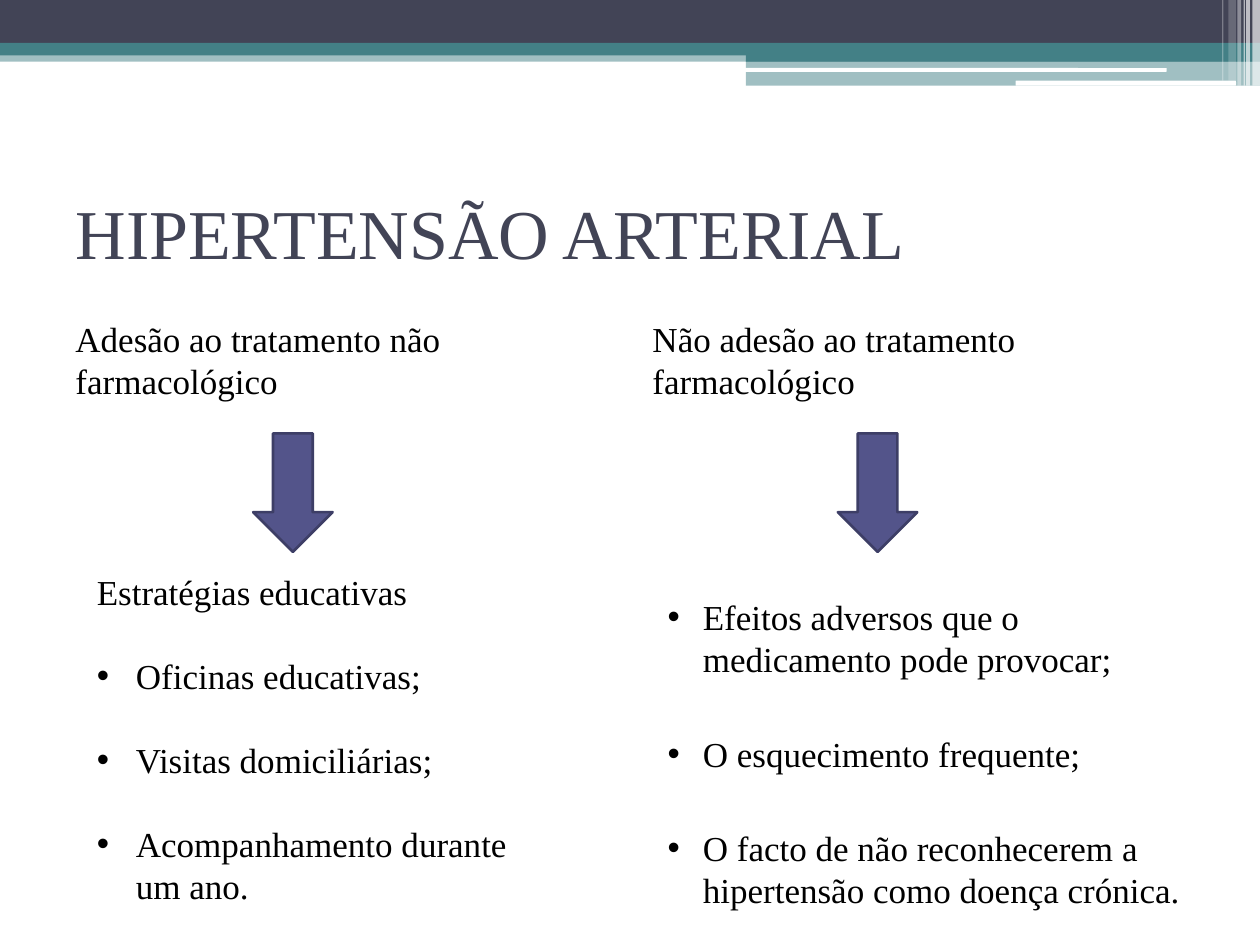
from dataclasses import dataclass

from lxml import etree
from pptx import Presentation
from pptx.dml.color import RGBColor
from pptx.enum.shapes import MSO_SHAPE
from pptx.enum.text import MSO_ANCHOR, PP_ALIGN
from pptx.oxml.ns import qn
from pptx.util import Inches, Pt

RECT = MSO_SHAPE.RECTANGLE
ROUNDED = MSO_SHAPE.ROUNDED_RECTANGLE
DOWN_ARROW = MSO_SHAPE.DOWN_ARROW
LEFT = PP_ALIGN.LEFT
MIDDLE = MSO_ANCHOR.MIDDLE
TOP = MSO_ANCHOR.TOP

WIDTH, HEIGHT = 10, 7.5
FONT = "Times New Roman"
NAVY, TEAL, WHITE, BLACK = "424456", "438086", "FFFFFF", "000000"
INDIGO, DARK_INDIGO = "53548A", "3D3E66"
LINE_HEIGHT = 24
HEADING_TOP, ARROW_TOP = 2.47, 3.44


@dataclass(frozen=True)
class Band:
    left: float
    top: float
    width: float
    height: float
    fill: str
    opacity: int = 100
    preset: int = RECT


@dataclass(frozen=True)
class Column:
    left: float
    heading: str
    arrow_left: float
    list_left: float
    list_top: float
    list_width: float
    hanging: float
    gap: int
    items: tuple[str, ...]
    intro: str = ""


BANDS = (
    Band(0, 0.4, WIDTH, 0.09, TEAL, 50),
    Band(0, 0, WIDTH, 0.34, NAVY),
    Band(0, 0.34, WIDTH, 0.1, TEAL),
    Band(5.92, 0.39, 4.08, 0.1, TEAL),
    Band(5.92, 0.48, 4.08, 0.2, TEAL, 50),
    Band(5.91, 0.54, 3.35, 0.03, WHITE, preset=ROUNDED),
    Band(8.06, 0.64, 1.75, 0.04, WHITE, preset=ROUNDED),
    Band(9.94, 0, 0.06, 0.68, WHITE, 65),
    Band(9.89, 0, 0.03, 0.68, WHITE, 65),
    Band(9.87, 0, 0.01, 0.68, WHITE, 60),
    Band(9.82, 0, 0.03, 0.68, WHITE, 40),
    Band(9.75, 0, 0.06, 0.64, WHITE, 20),
    Band(9.7, 0, 0.01, 0.64, WHITE, 30),
)

COLUMNS = (
    Column(0.5, "Adesão ao tratamento não farmacológico", 2.01,
           0.67, 4.48, 3.7, 0.31, LINE_HEIGHT,
           ("Oficinas educativas;", "Visitas domiciliárias;",
            "Acompanhamento durante um ano."),
           "Estratégias educativas"),
    Column(5.08, "Não adesão ao tratamento farmacológico", 6.65,
           5.2, 4.68, 4.3, 0.28, 30,
           ("Efeitos adversos que o medicamento pode provocar;",
            "O esquecimento frequente;",
            "O facto de não reconhecerem a hipertensão como doença crónica.")),
)


def rgb(hex_color: str) -> RGBColor:
    return RGBColor.from_string(hex_color)


def add_preset(slide, preset, left, top, width, height, fill, opacity=100):
    shape = slide.shapes.add_shape(
        preset, Inches(left), Inches(top), Inches(width), Inches(height))
    shape.shadow.inherit = False
    shape.fill.solid()
    shape.fill.fore_color.rgb = rgb(fill)
    shape.line.fill.background()
    if opacity < 100:
        color = shape.fill._xPr.find(f".//{qn('a:srgbClr')}")
        etree.SubElement(color, qn("a:alpha"), val=str(opacity * 1000))
    return shape


def write(paragraph, text: str, *, size: int = 20, color: str = BLACK,
          line_height: int | None = LINE_HEIGHT, before: int = 0,
          hanging: float = 0) -> None:
    """Fill a paragraph; a hanging indent also gives it a bullet."""
    paragraph.alignment = LEFT
    paragraph.space_before = Pt(before)
    if line_height:
        paragraph.line_spacing = Pt(line_height)
    run = paragraph.add_run()
    run.text = text
    run.font.name = FONT
    run.font.size = Pt(size)
    run.font.color.rgb = rgb(color)
    if hanging:
        properties = paragraph._p.get_or_add_pPr()
        properties.set("marL", str(Inches(hanging)))
        properties.set("indent", str(-Inches(hanging)))
        etree.SubElement(properties, qn("a:buFont"), typeface="Arial")
        etree.SubElement(properties, qn("a:buChar"), char="•")


def add_text_frame(slide, left, top, width, height):
    box = slide.shapes.add_textbox(
        Inches(left), Inches(top), Inches(width), Inches(height))
    frame = box.text_frame
    frame.word_wrap = True
    frame.vertical_anchor = TOP
    return frame


def add_column(slide, column: Column) -> None:
    heading = add_text_frame(slide, column.left, HEADING_TOP, 4.42, 0.8)
    write(heading.paragraphs[0], column.heading)

    arrow = add_preset(slide, DOWN_ARROW, column.arrow_left, ARROW_TOP,
                       0.63, 0.94, INDIGO)
    arrow.line.color.rgb = rgb(DARK_INDIGO)
    arrow.line.width = Pt(1.5)

    frame = add_text_frame(slide, column.list_left, column.list_top,
                           column.list_width, HEIGHT - 0.1 - column.list_top)
    lines = [(item, column.hanging) for item in column.items]
    if column.intro:
        lines.insert(0, (column.intro, 0))
    for index, (text, hanging) in enumerate(lines):
        paragraph = frame.add_paragraph() if index else frame.paragraphs[0]
        write(paragraph, text, hanging=hanging,
              before=column.gap if index else 0)


def main() -> None:
    deck = Presentation()
    deck.slide_width, deck.slide_height = Inches(WIDTH), Inches(HEIGHT)
    slide = deck.slides.add_slide(deck.slide_layouts[5])

    for band in BANDS:
        add_preset(slide, band.preset, band.left, band.top, band.width,
                   band.height, band.fill, band.opacity)

    title = slide.shapes.title
    title.left, title.top = Inches(0.5), Inches(1.25)
    title.width, title.height = Inches(9), Inches(1.17)
    title.text_frame.vertical_anchor = MIDDLE
    write(title.text_frame.paragraphs[0], "HIPERTENSÃO ARTERIAL",
          size=40, color=NAVY, line_height=None)

    for column in COLUMNS:
        add_column(slide, column)
    deck.save("out.pptx")


if __name__ == "__main__":
    main()
